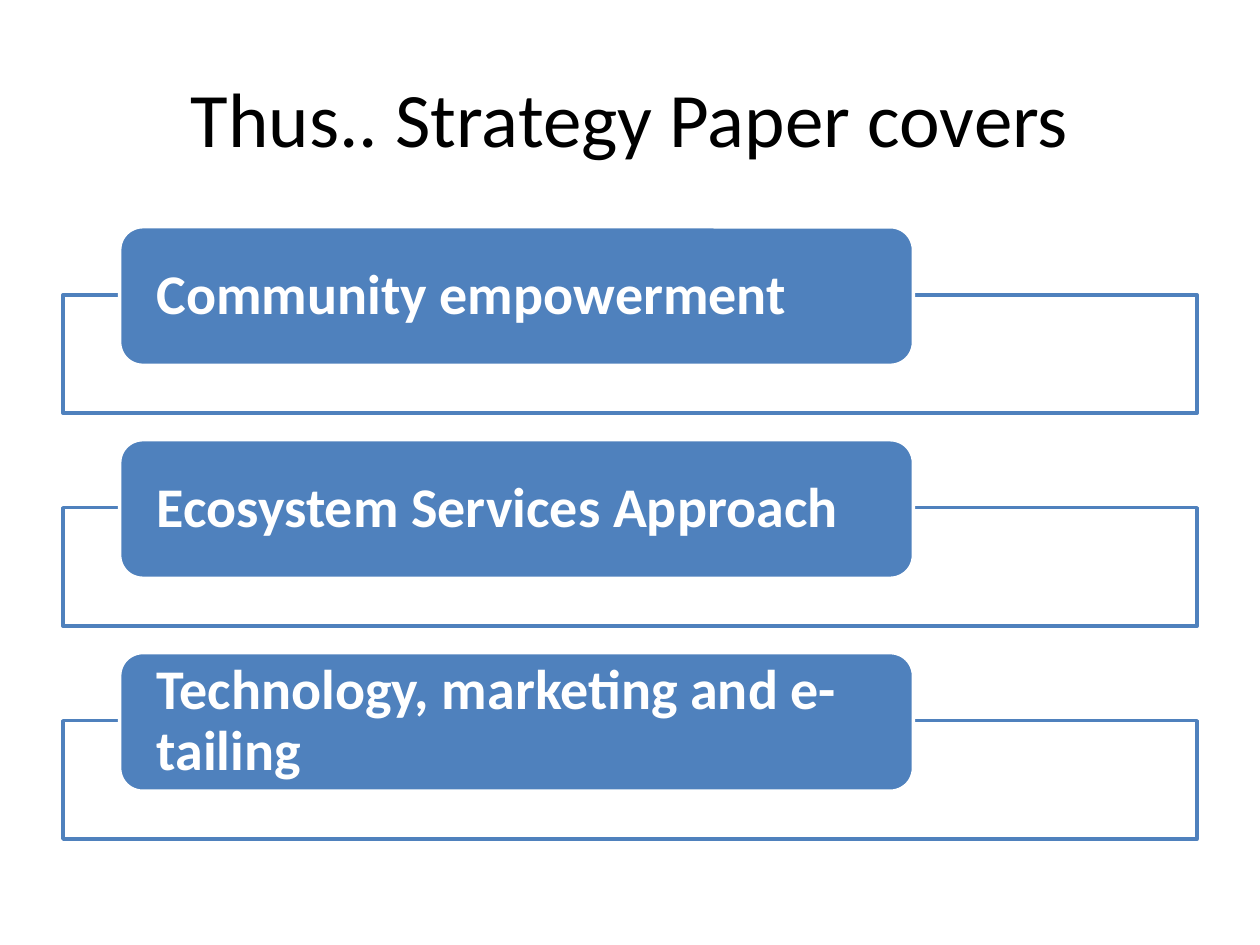
from dataclasses import dataclass

from pptx import Presentation
from pptx.dml.color import RGBColor
from pptx.enum.shapes import MSO_SHAPE
from pptx.enum.text import MSO_ANCHOR, PP_ALIGN
from pptx.shapes.autoshape import Shape
from pptx.slide import Slide
from pptx.util import Inches, Pt

RECTANGLE = MSO_SHAPE.RECTANGLE
ROUNDED_RECTANGLE = MSO_SHAPE.ROUNDED_RECTANGLE
MIDDLE = MSO_ANCHOR.MIDDLE
LEFT = PP_ALIGN.LEFT
CENTER = PP_ALIGN.CENTER
TITLE_ONLY_LAYOUT = 5


@dataclass(frozen=True)
class Theme:
    font: str = "Calibri"
    title_size: Pt = Pt(44)
    label_size: Pt = Pt(32)
    line_width: Pt = Pt(2)
    black: RGBColor = RGBColor(0x00, 0x00, 0x00)
    white: RGBColor = RGBColor(0xFF, 0xFF, 0xFF)
    blue: RGBColor = RGBColor(0x4F, 0x81, 0xBD)


@dataclass(frozen=True)
class Bounds:
    left: float
    top: float
    width: float
    height: float


@dataclass(frozen=True)
class Topic:
    label: str
    top: float


THEME = Theme()
TITLE = "Thus.. Strategy Paper covers"
TITLE_BOUNDS = Bounds(0.5, 0.3, 9, 1.25)
LABELS = (
    "Community empowerment",
    "Ecosystem Services Approach",
    "Technology, marketing and e-tailing",
)
FIRST_TOP = 1.8
TOPIC_PITCH = 1.69
TAB_HEIGHT = 1.1
TOPICS = [Topic(label, FIRST_TOP + index * TOPIC_PITCH)
          for index, label in enumerate(LABELS)]


def add_title(page: Slide) -> None:
    title = page.shapes.title
    title.left, title.top = Inches(TITLE_BOUNDS.left), Inches(TITLE_BOUNDS.top)
    title.width, title.height = Inches(TITLE_BOUNDS.width), Inches(TITLE_BOUNDS.height)
    title.text_frame.text = TITLE
    title.text_frame.vertical_anchor = MIDDLE
    para = title.text_frame.paragraphs[0]
    para.alignment = CENTER
    para.font.name = THEME.font
    para.font.size = THEME.title_size
    para.font.color.rgb = THEME.black


def add_box(page: Slide, kind: MSO_SHAPE, bounds: Bounds,
            fill: RGBColor, line: RGBColor) -> Shape:
    box = page.shapes.add_shape(kind, Inches(bounds.left), Inches(bounds.top),
                                Inches(bounds.width), Inches(bounds.height))
    box.shadow.inherit = False
    box.fill.solid()
    box.fill.fore_color.rgb = fill
    box.line.color.rgb = line
    box.line.width = THEME.line_width
    return box


def add_topic(page: Slide, topic: Topic) -> None:
    """Draw an outlined panel with a filled tab centred on its top edge."""
    panel = Bounds(0.5, topic.top + TAB_HEIGHT / 2 - 0.01, 9, 0.94)
    add_box(page, RECTANGLE, panel, THEME.white, THEME.blue)
    tab = add_box(page, ROUNDED_RECTANGLE, Bounds(0.95, topic.top, 6.3, TAB_HEIGHT),
                  THEME.blue, THEME.white)
    frame = tab.text_frame
    frame.word_wrap = True
    frame.vertical_anchor = MIDDLE
    frame.margin_left = frame.margin_right = Inches(0.24)
    frame.margin_top = frame.margin_bottom = 0
    frame.text = topic.label
    para = frame.paragraphs[0]
    para.alignment = LEFT
    para.line_spacing = 0.9
    para.font.name = THEME.font
    para.font.size = THEME.label_size
    para.font.bold = True
    para.font.color.rgb = THEME.white


def main() -> None:
    deck = Presentation()
    deck.slide_width, deck.slide_height = Inches(10), Inches(7.5)
    page = deck.slides.add_slide(deck.slide_layouts[TITLE_ONLY_LAYOUT])
    add_title(page)
    for topic in TOPICS:
        add_topic(page, topic)
    deck.save("out.pptx")


if __name__ == "__main__":
    main()
